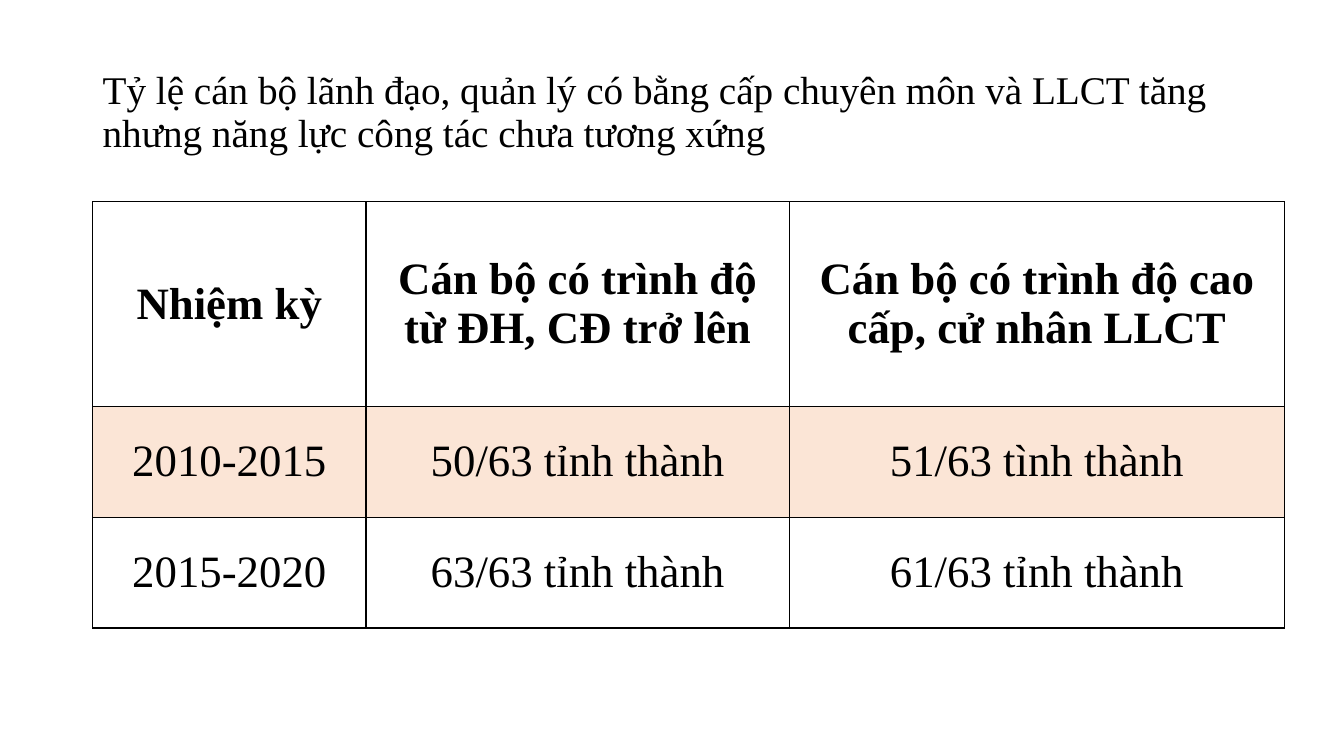
from dataclasses import dataclass

from lxml.etree import SubElement
from pptx import Presentation
from pptx.dml.color import RGBColor
from pptx.enum.text import MSO_ANCHOR as Anchor, PP_ALIGN as Align
from pptx.oxml.ns import qn
from pptx.util import Inches, Pt


@dataclass(frozen=True)
class Theme:
    font: str = "Times New Roman"
    ink: str = "000000"
    paper: str = "FFFFFF"
    band: str = "FBE5D6"
    title_size: int = 28
    table_size: int = 32
    border: float = 1


THEME = Theme()

TITLE = ("Tỷ lệ cán bộ lãnh đạo, quản lý có bằng cấp chuyên môn và LLCT tăng "
         "nhưng năng lực công tác chưa tương xứng")
COLUMN_WIDTHS = [2.71, 4.2, 4.91]
ROW_HEIGHTS = [2.03, 1.1, 1.1]
ROWS = [
    ["Nhiệm kỳ", "Cán bộ có trình độ từ ĐH, CĐ trở lên",
     "Cán bộ có trình độ cao cấp, cử nhân LLCT"],
    ["2010-2015", "50/63 tỉnh thành", "51/63 tình thành"],
    ["2015-2020", "63/63 tỉnh thành", "61/63 tỉnh thành"],
]


def add_run(para, text, size, bold=False):
    run = para.add_run()
    run.text = text
    run.font.name = THEME.font
    run.font.size = Pt(size)
    run.font.bold = bold
    run.font.color.rgb = RGBColor.from_string(THEME.ink)


def add_title(page, left, top, width, height):
    box = page.shapes.add_textbox(
        Inches(left), Inches(top), Inches(width), Inches(height))
    frame = box.text_frame
    frame.word_wrap = True
    frame.vertical_anchor = Anchor.MIDDLE
    para = frame.paragraphs[0]
    para.line_spacing = 0.9
    add_run(para, TITLE, THEME.title_size)


def draw_borders(cell):
    """Put a thin line on all four sides; lines precede the cell fill."""
    properties = cell._tc.get_or_add_tcPr()
    for side in ("lnL", "lnR", "lnT", "lnB"):
        line = SubElement(properties, qn(f"a:{side}"), w=str(Pt(THEME.border)))
        fill = SubElement(line, qn("a:solidFill"))
        SubElement(fill, qn("a:srgbClr"), val=THEME.ink)


def add_term_table(page, left, top):
    table = page.shapes.add_table(
        len(ROWS), len(COLUMN_WIDTHS), Inches(left), Inches(top),
        Inches(sum(COLUMN_WIDTHS)), Inches(sum(ROW_HEIGHTS))).table
    table.horz_banding = False
    for column, width in zip(table.columns, COLUMN_WIDTHS):
        column.width = Inches(width)

    for index, (row, height, texts) in enumerate(
            zip(table.rows, ROW_HEIGHTS, ROWS)):
        row.height = Inches(height)
        color = THEME.band if index % 2 else THEME.paper
        for cell, text in zip(row.cells, texts):
            draw_borders(cell)
            cell.fill.solid()
            cell.fill.fore_color.rgb = RGBColor.from_string(color)
            cell.vertical_anchor = Anchor.MIDDLE
            para = cell.text_frame.paragraphs[0]
            para.alignment = Align.CENTER
            add_run(para, text, THEME.table_size, bold=index == 0)


def main():
    deck = Presentation()
    deck.slide_width, deck.slide_height = Inches(13.33), Inches(7.5)
    page = deck.slides.add_slide(deck.slide_layouts[6])

    # Heading above the comparison of the two terms
    add_title(page, 0.92, 0.4, 11.5, 1.45)
    add_term_table(page, 0.92, 2)

    deck.save("out.pptx")


if __name__ == "__main__":
    main()
